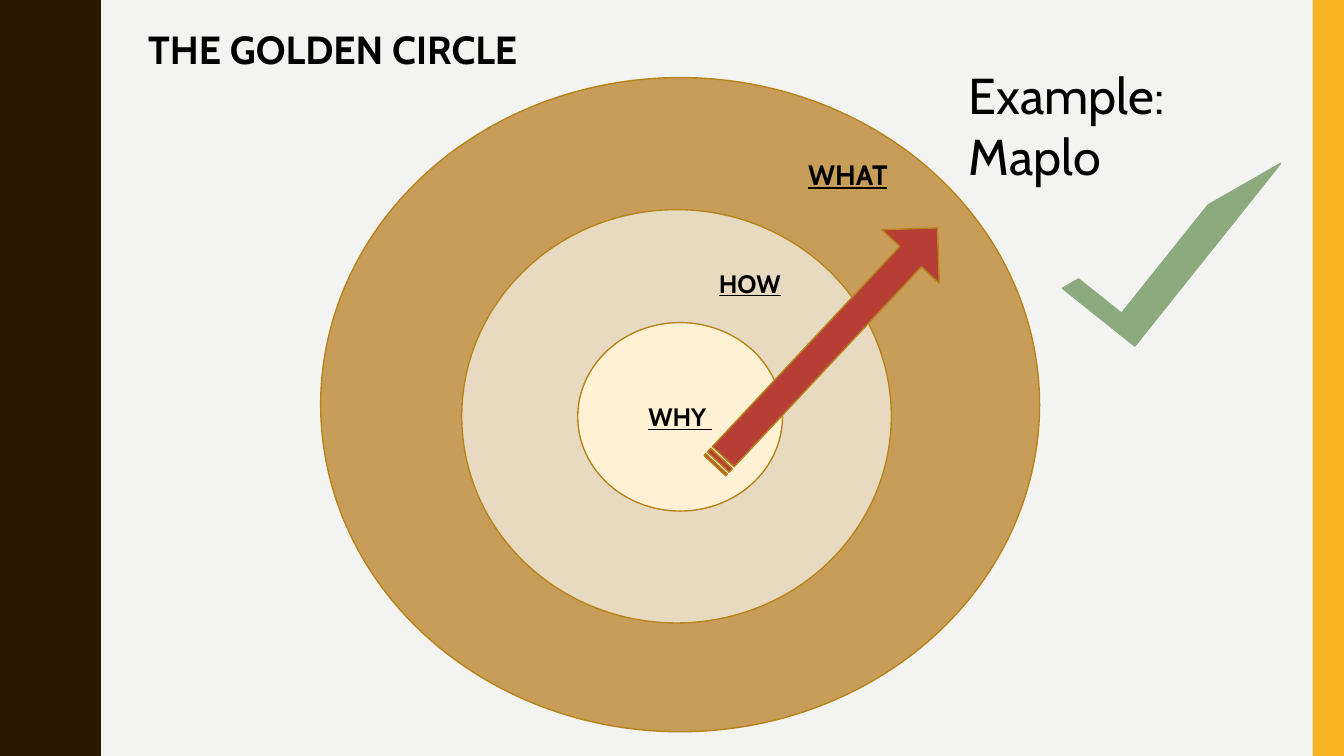
from dataclasses import dataclass

from pptx import Presentation
from pptx import util as u
from pptx.dml.color import RGBColor
from pptx.enum import shapes, text

# Content: places are (left, top, width, height) in percent of the slide
TITLE = ("THE GOLDEN CIRCLE", (10.28, 2.67, 41.49, 7.6))
RINGS = [
    ("outer", (23.86, 10.27, 53.49, 86.53)),
    ("middle", (34.36, 27.73, 31.96, 54.67)),
    ("inner", (42.99, 42.67, 15.23, 24.93)),
]
CORE_LABEL = "WHY "
RING_LABELS = [
    ("HOW", (48.39, 34.8, 14.78, 5.33), "label"),
    ("WHAT", (54.84, 20.13, 16.5, 5.87), "large_label"),
]
EXAMPLE = ("Example: Maplo", (71.34, 7.87, 25.51, 9.47))
ARROW = ((49.36, 40.67, 24.23, 10.4), 313.1, (0.379, 0.5))
TICK = ((83.72, 14.4, 6.9, 30.93), 218.6, (0.188, 0.333))
SIDE_BAR = (97.67, 0, 2.33, 100)

# Wavy edge, in inches: (down, out) from a trough to the middle of a slope
WAVE_TROUGH, WAVE_DEPTH, WAVE_PERIOD, WAVE_COUNT = 0.78, 0.19, 1.5, 5
WAVE_SLOPE = [(0, 0), (0.07, 0), (0.14, 0.01), (0.2, 0.02), (0.25, 0.03),
              (0.29, 0.05), (0.33, 0.07), (0.38, 0.09)]


@dataclass(frozen=True)
class Theme:
    font: str = "Cabin"
    ink: str = "000000"
    background: str = "F3F3F2"
    wave: str = "2A1A00"
    bar: str = "F8B323"
    outline: str = "B7841A"
    outer: str = "C89D5A"
    middle: str = "E8DAC0"
    inner: str = "FFF1D4"
    arrow: str = "B73E35"
    tick: str = "8CAA7E"
    label: int = 18
    large_label: int = 20
    title: int = 28
    example: int = 36


theme = Theme()
deck = Presentation()
deck.slide_width, deck.slide_height = u.Inches(13.333), u.Inches(7.5)
page = deck.slides.add_slide(deck.slide_layouts[5])
page.background.fill.solid()
page.background.fill.fore_color.rgb = RGBColor.from_string(theme.background)


def place(area):
    sides = (deck.slide_width, deck.slide_height) * 2
    return [round(side * share / 100) for side, share in zip(sides, area)]


def paint(shape, fill, line=None):
    shape.shadow.inherit = False
    shape.fill.solid()
    shape.fill.fore_color.rgb = RGBColor.from_string(fill)
    if line:
        shape.line.color.rgb = RGBColor.from_string(line)
        shape.line.width = u.Pt(1)
    else:
        shape.line.fill.background()


def draw(kind, area, fill, line=None, rotation=0, adjustments=()):
    shape = page.shapes.add_shape(kind, *place(area))
    paint(shape, fill, line)
    shape.rotation = rotation
    for index, value in enumerate(adjustments):
        shape.adjustments[index] = value
    return shape


def write(shape, words, size, align, anchor=text.MSO_ANCHOR.TOP,
          bold=True, underline=False):
    frame = shape.text_frame
    frame.word_wrap = True
    frame.auto_size = text.MSO_AUTO_SIZE.NONE
    frame.vertical_anchor = anchor
    para = frame.paragraphs[0]
    para.text = words
    para.alignment = align
    font = para.font
    font.name, font.size = theme.font, u.Pt(size)
    font.bold, font.underline = bold, underline
    font.color.rgb = RGBColor.from_string(theme.ink)


LEFT, CENTER = text.PP_ALIGN.LEFT, text.PP_ALIGN.CENTER
KIND = shapes.MSO_SHAPE

# Wavy left edge: each slope is mirrored into a half wave, then into a whole one
half = WAVE_SLOPE + [(WAVE_PERIOD / 2 - down, WAVE_DEPTH - out)
                     for down, out in reversed(WAVE_SLOPE)]
wave = half + [(WAVE_PERIOD - down, out) for down, out in reversed(half)]
edge = [(WAVE_TROUGH + out, number * WAVE_PERIOD + down)
        for number in range(WAVE_COUNT) for down, out in wave]
builder = page.shapes.build_freeform(0, 0, scale=u.Inches(1))
builder.add_line_segments(edge + [(0, WAVE_COUNT * WAVE_PERIOD)], close=True)
paint(builder.convert_to_shape(), theme.wave)

# Right bar
draw(KIND.RECTANGLE, SIDE_BAR, theme.bar)

# Title
heading, area = TITLE
title = page.shapes.title
title.left, title.top, title.width, title.height = place(area)
write(title, heading, theme.title, LEFT)

# Rings, from the outside in; the last one holds the core label
for name, area in RINGS:
    ring = draw(KIND.OVAL, area, getattr(theme, name), theme.outline)
write(ring, CORE_LABEL, theme.label, CENTER, text.MSO_ANCHOR.MIDDLE, underline=True)

# Ring labels
for words, area, size in RING_LABELS:
    box = page.shapes.add_textbox(*place(area))
    write(box, words, getattr(theme, size), CENTER, underline=True)

# Arrow from the core outwards
area, rotation, adjustments = ARROW
draw(KIND.STRIPED_RIGHT_ARROW, area, theme.arrow, theme.outline, rotation, adjustments)

# Example with its tick
words, area = EXAMPLE
write(page.shapes.add_textbox(*place(area)), words, theme.example, LEFT, bold=False)
area, rotation, adjustments = TICK
draw(KIND.HALF_FRAME, area, theme.tick, theme.tick, rotation, adjustments)

deck.save("out.pptx")
